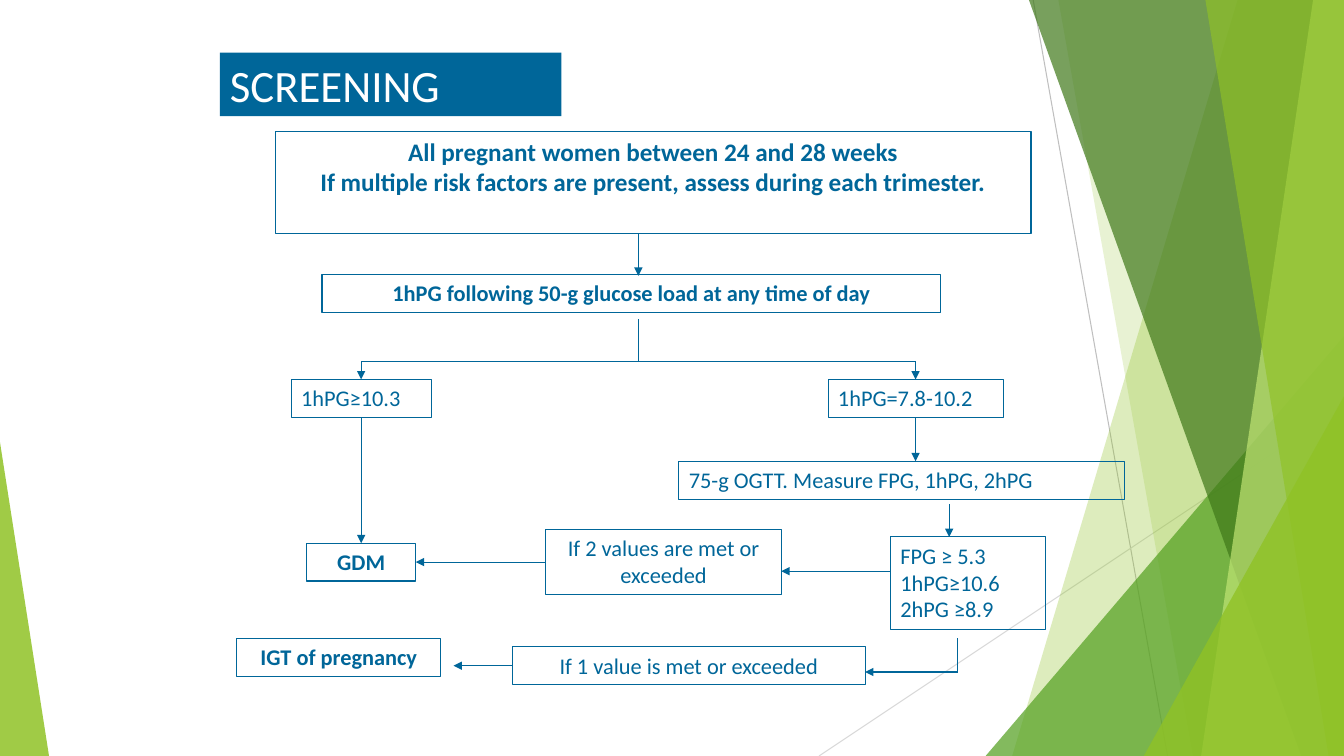
from dataclasses import dataclass

from lxml import etree
from pptx import Presentation
from pptx.dml.color import RGBColor
from pptx.enum.shapes import MSO_CONNECTOR, MSO_SHAPE
from pptx.enum.text import MSO_ANCHOR, MSO_AUTO_SIZE, PP_ALIGN
from pptx.oxml.ns import qn
from pptx.util import Pt

STRAIGHT = MSO_CONNECTOR.STRAIGHT
RECTANGLE, TRIANGLE = MSO_SHAPE.RECTANGLE, MSO_SHAPE.ISOSCELES_TRIANGLE
LEFT, CENTER = PP_ALIGN.LEFT, PP_ALIGN.CENTER
TOP, NO_FIT = MSO_ANCHOR.TOP, MSO_AUTO_SIZE.NONE
SIDE_TOP, SIDE_LEFT, SIDE_BOTTOM, SIDE_RIGHT = range(4)


@dataclass(frozen=True)
class Theme:
    """Colours, font and type sizes of the deck."""
    blue: str = "006699"
    white: str = "FFFFFF"
    leaf: str = "90C226"
    grass: str = "54A021"
    forest: str = "3F7819"
    lime: str = "C0E474"
    gray: str = "BFBFBF"
    silver: str = "D9D9D9"
    font: str = "Calibri"
    title: int = 32
    lead: int = 18
    body: int = 16
    stroke: float = 0.75


THEME = Theme()


def write(shape, text, size=THEME.body, color=THEME.blue, bold=False, align=LEFT):
    """Write one paragraph per line of text into a shape, from its top."""
    frame = shape.text_frame
    frame.word_wrap = True
    frame.auto_size = NO_FIT
    frame.vertical_anchor = TOP
    frame.text = text
    for para in frame.paragraphs:
        para.alignment = align
        for span in para.runs:
            span.font.name = THEME.font
            span.font.size = Pt(size)
            span.font.bold = bold
            span.font.color.rgb = RGBColor.from_string(color)


def add_box(page, area, text, **text_format):
    """Add an outlined rectangle with text and return it."""
    box = page.shapes.add_shape(RECTANGLE, *map(Pt, area))
    box.shadow.inherit = False
    box.fill.background()
    box.line.color.rgb = RGBColor.from_string(THEME.blue)
    box.line.width = Pt(THEME.stroke)
    write(box, text, **text_format)
    return box


def add_line(page, start, end, color=THEME.blue, arrow=False, source=None, target=None):
    """Draw a line between points, joined to (box, side) pairs where given."""
    line = page.shapes.add_connector(STRAIGHT, *map(Pt, (*start, *end)))
    line.line.color.rgb = RGBColor.from_string(color)
    line.line.width = Pt(THEME.stroke)
    if source:
        line.begin_connect(*source)
    if target:
        line.end_connect(*target)
    properties = line._element.spPr
    if arrow:
        etree.SubElement(properties.find(qn("a:ln")), qn("a:tailEnd"), type="triangle")
    etree.SubElement(properties, qn("a:effectLst"))


def tint(shape, color, opacity):
    """Fill a shape with a translucent colour and no outline."""
    shape.shadow.inherit = False
    shape.line.fill.background()
    shape.fill.solid()
    shape.fill.fore_color.rgb = RGBColor.from_string(color)
    node = shape._element.spPr.find(qn("a:solidFill"))[0]
    etree.SubElement(node, qn("a:alpha"), val=str(opacity * 1000))


def add_band(page, area, top_x, bottom_x, color, opacity):
    """Add a slanted band that reaches the right edge of the area."""
    left, top, width, height = area
    right, bottom = left + width, top + height
    outline = page.shapes.build_freeform(Pt(left + top_x), Pt(top), scale=1.0)
    corners = [(right, top), (right, bottom), (left + bottom_x, bottom)]
    outline.add_line_segments([(Pt(x), Pt(y)) for x, y in corners])
    tint(outline.convert_to_shape(), color, opacity)


def add_corner(page, area, size, color, opacity, apex):
    """Add a right triangle in the bottom corner under its apex side."""
    left, top, width, height = area
    corner_width, corner_height = size
    x = left + apex * (width - corner_width)
    y = top + height - corner_height
    shape = page.shapes.add_shape(TRIANGLE, *map(Pt, (x, y, *size)))
    shape.adjustments[0] = apex
    tint(shape, color, opacity)


def draw_backdrop(page, area):
    """Draw the green facets at the sides of the area."""
    left, top, width, height = area
    bottom = top + height
    add_line(page, (left + 738, top), (left + 834, bottom), color=THEME.gray)
    add_line(page, (left + width, top + 290), (left + 585, bottom), color=THEME.silver)
    add_band(page, area, 884, 723, THEME.leaf, 30)
    add_band(page, area, 756, 852, THEME.leaf, 20)
    add_corner(page, area, (256, 300), THEME.grass, 72, apex=1)
    add_band(page, area, 735, 929.5, THEME.forest, 70)
    add_band(page, area, 938, 858, THEME.lime, 70)
    add_band(page, area, 861, 949, THEME.leaf, 65)
    add_corner(page, area, (143, 257), THEME.leaf, 80, apex=1)
    add_corner(page, area, (35, 224), THEME.leaf, 85, apex=0)


def draw_title(page, area):
    """Place the title placeholder as a blue banner."""
    title = page.shapes.title
    title.left, title.top, title.width, title.height = map(Pt, area)
    title.fill.solid()
    title.fill.fore_color.rgb = RGBColor.from_string(THEME.blue)
    write(title, "SCREENING", size=THEME.title, color=THEME.white)


def draw_flow(page, area):
    """Draw the screening flowchart inside the area."""
    left, top, _, _ = area

    def at(x, y):
        return left + x, top + y

    def box(x, y, width, height, text, **text_format):
        return add_box(page, (*at(x, y), width, height), text, **text_format)

    def line(start, end, **line_format):
        add_line(page, at(*start), at(*end), **line_format)

    trunk, high, middle = 287, 89, 485
    branch_y, row = 164, 27
    box(27.5, 0, 540, 73, "All pregnant women between 24 and 28 weeks\n"
        "If multiple risk factors are present, assess during each trimester.",
        size=THEME.lead, bold=True, align=CENTER)
    box(61, 102, 442, row, "1hPG following 50-g glucose load at any time of day",
        bold=True, align=CENTER)
    high_box = box(high - 50, 177, 100, row, "1hPG≥10.3")
    middle_box = box(middle - 62.5, 177, 125, row, "1hPG=7.8-10.2")
    box(316, 235.5, 318, row, "75-g OGTT. Measure FPG, 1hPG, 2hPG")
    box(467, 289.5, 111, 66, "FPG ≥ 5.3\n1hPG≥10.6\n2hPG ≥8.9")
    two_values = box(221, 284, 168, 47, "If 2 values are met or exceeded", align=CENTER)
    one_value = box(197, 368, 252, row, "If 1 value is met or exceeded", align=CENTER)
    diabetes = box(high - 39, 294, 78, row, "GDM", bold=True, align=CENTER)
    box(0, 362, 146, row, "IGT of pregnancy", bold=True, align=CENTER)

    line((trunk, 73.5), (trunk, 103), arrow=True)
    line((trunk, 134), (trunk, branch_y))
    for x, target in ((high, high_box), (middle, middle_box)):
        line((trunk, branch_y), (x, branch_y))
        line((x, branch_y), (x, 177), arrow=True, target=(target, SIDE_TOP))
    line((high, 204), (high, 294), arrow=True,
         source=(high_box, SIDE_BOTTOM), target=(diabetes, SIDE_TOP))
    line((middle, 204), (middle, 235.5), arrow=True, source=(middle_box, SIDE_BOTTOM))
    line((509, 266), (509, 289.5), arrow=True)
    line((467, 314), (389, 314), arrow=True)
    line((221, 307.5), (128, 307.5), arrow=True,
         source=(two_values, SIDE_LEFT), target=(diabetes, SIDE_RIGHT))
    line((515, 362), (515, 386))
    line((515, 386), (449, 386), arrow=True)
    line((197, 381.5), (155, 381.5), arrow=True, source=(one_value, SIDE_LEFT))


def main():
    """Build the deck and save it."""
    deck = Presentation()
    deck.slide_width, deck.slide_height = Pt(960), Pt(540)
    page = deck.slides.add_slide(deck.slide_layouts[5])
    draw_backdrop(page, (0, 0, 960, 540))
    draw_title(page, (157, 37.5, 244, 45.5))
    draw_flow(page, (169, 94, 635, 395))
    deck.save("out.pptx")


if __name__ == "__main__":
    main()
